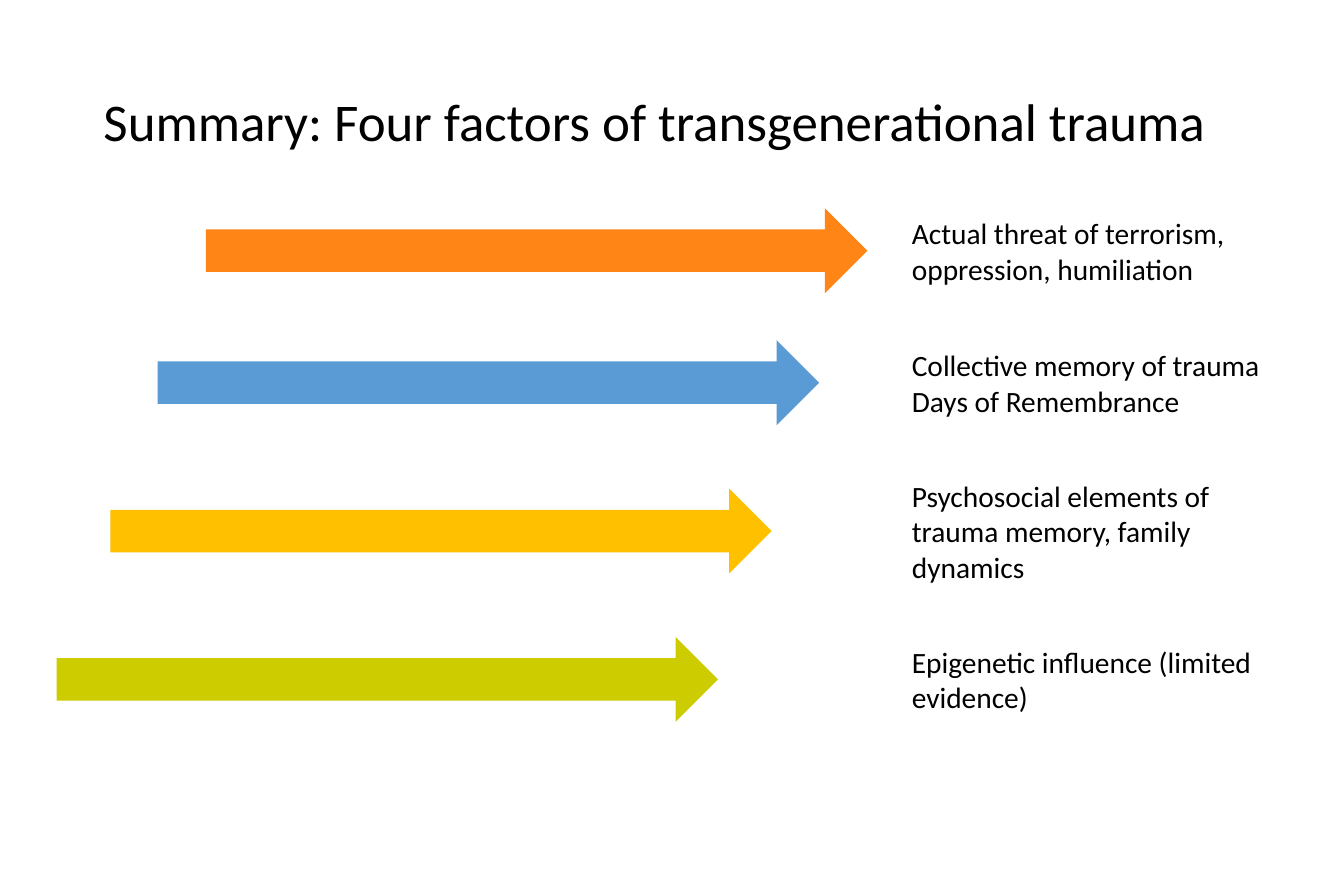
from pptx import Presentation
from pptx.dml.color import RGBColor
from pptx.enum.shapes import MSO_SHAPE
from pptx.enum.text import MSO_ANCHOR
from pptx.util import Pt


def color(value):
    return RGBColor.from_string(value)


def add_text(shapes, left, top, width, height, lines, size, spacing=1.0):
    tf = shapes.add_textbox(Pt(left), Pt(top), Pt(width), Pt(height)).text_frame
    tf.word_wrap = True
    tf.vertical_anchor = MSO_ANCHOR.MIDDLE
    for i, line in enumerate(lines):
        p = tf.paragraphs[0] if i == 0 else tf.add_paragraph()
        p.line_spacing = spacing
        r = p.add_run()
        r.text = line
        r.font.name = "Calibri"
        r.font.size = Pt(size)
        r.font.color.rgb = color("000000")


prs = Presentation()
prs.slide_width, prs.slide_height = Pt(822.24), Pt(540)
s = prs.slides.add_slide(prs.slide_layouts[6])

# Title
add_text(s.shapes, 56.2, 46.8, 709.2, 59,
         ["Summary: Four factors of transgenerational trauma"], 32.4, 0.9)

# Factors: arrow left, arrow top, arrow colour, label height, label lines
factors = [
    (126, 127.4, "FF8517", 51,
     ["Actual threat of terrorism, oppression, humiliation"]),
    (96.5, 208.1, "5B9BD5", 51,
     ["Collective memory of trauma", "Days of Remembrance"]),
    (67.5, 298.8, "FFC000", 72.7,
     ["Psychosocial elements of trauma memory, family dynamics"]),
    (34.7, 389.5, "CCCC00", 51,
     ["Epigenetic influence (limited evidence)"]),
]
arrow_width, arrow_height = 404.6, 52

# Each arrow is grouped with its label, centred on the same line
for left, top, fill, label_height, lines in factors:
    group = s.shapes.add_group_shape()
    arrow = group.shapes.add_shape(MSO_SHAPE.RIGHT_ARROW, Pt(left), Pt(top),
                                   Pt(arrow_width), Pt(arrow_height))
    arrow.shadow.inherit = False
    arrow.fill.solid()
    arrow.fill.fore_color.rgb = color(fill)
    arrow.line.fill.background()
    label_top = top + (arrow_height - label_height) / 2
    add_text(group.shapes, 550.8, label_top, 249.8, label_height, lines, 18)

prs.save("out.pptx")
